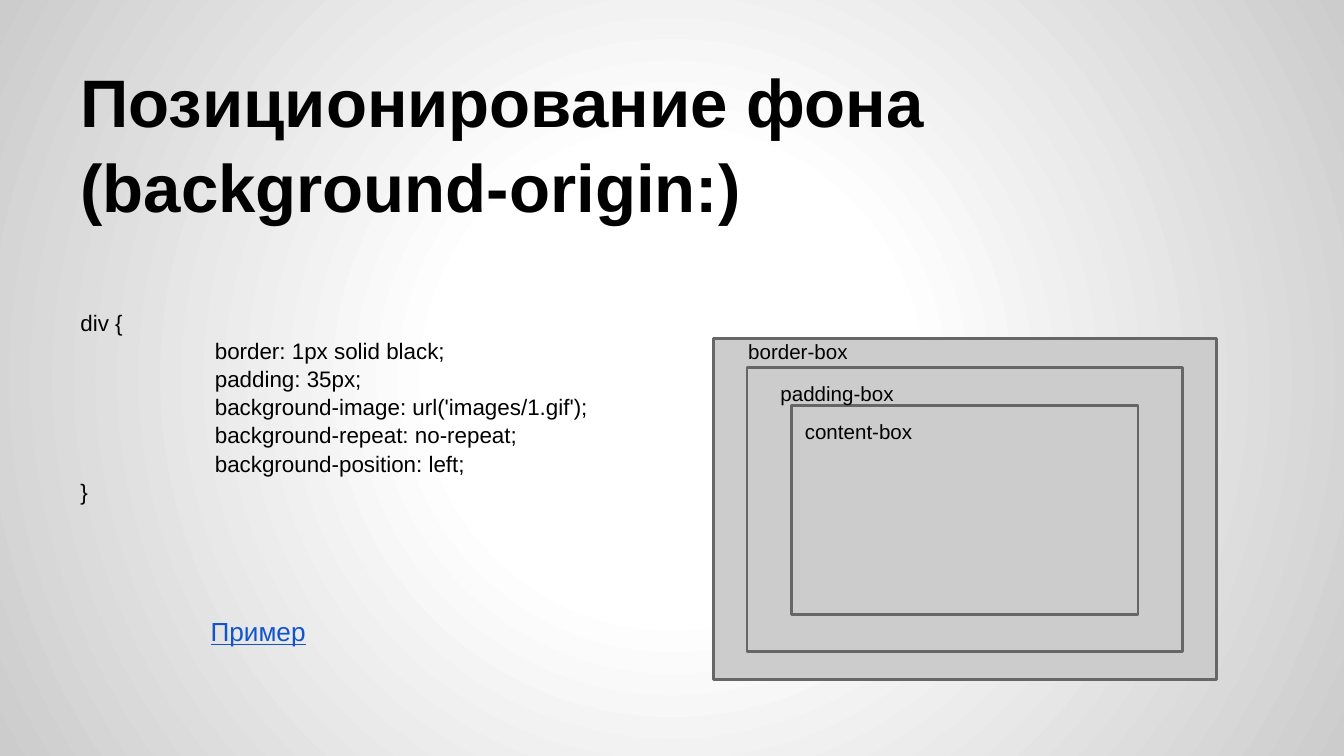
from dataclasses import dataclass

from lxml.etree import SubElement
from pptx import Presentation
from pptx.dml.color import RGBColor
from pptx.enum.shapes import MSO_SHAPE
from pptx.enum.text import MSO_ANCHOR, MSO_AUTO_SIZE, PP_ALIGN
from pptx.oxml import parse_xml
from pptx.oxml.ns import nsdecls, qn
from pptx.slide import Slide
from pptx.text.text import TextFrame
from pptx.util import Cm, Pt

COLORS = {"text": "000000", "link": "1155CC", "box": "CCCCCC",
          "outline": "666666", "center": "FFFFFF", "edge": "CCCCCC"}
FONT = "Arial"
CODE_INDENT = Cm(2.54)


@dataclass(frozen=True)
class Area:
    left: float
    top: float
    width: float
    height: float

    def lengths(self) -> list[Cm]:
        return [Cm(n) for n in (self.left, self.top, self.width, self.height)]


@dataclass(frozen=True)
class Label:
    text: str
    area: Area
    size: float = 11
    color: str = "text"
    underline: bool = False


BOXES = [
    Area(13.49, 6.4, 9.5, 6.45),
    Area(14.12, 6.95, 8.23, 5.36),
    Area(14.96, 7.67, 6.55, 3.94),
]
LABELS = [
    Label("border-box", Area(13.89, 6.15, 3.05, 1.09)),
    Label("padding-box", Area(14.5, 6.96, 3.05, 1.09)),
    Label("content-box", Area(14.96, 7.67, 3.05, 1.09)),
    Label("Пример", Area(3.73, 11.38, 3.81, 1.47), 14, "link", True),
]
TITLE = ["Позиционирование фона", "(background-origin:)"]
DECLARATIONS = [
    "border: 1px solid black;",
    "padding: 35px;",
    "background-image: url('images/1.gif');",
    "background-repeat: no-repeat;",
    "background-position: left;",
]


def rgb(name: str) -> RGBColor:
    return RGBColor.from_string(COLORS[name])


def paint_background(slide: Slide) -> None:
    stops = "".join(
        f'<a:gs pos="{position * 1000}"><a:srgbClr val="{COLORS[name]}"/></a:gs>'
        for position, name in [(0, "center"), (30, "center"), (100, "edge")])
    slide.background.fill.solid()
    solid = slide.background._cSld.find(".//" + qn("a:solidFill"))
    solid.getparent().replace(solid, parse_xml(
        f'<a:gradFill {nsdecls("a")}><a:gsLst>{stops}</a:gsLst>'
        '<a:path path="circle"><a:fillToRect l="50000" t="50000" r="50000" b="50000"/>'
        '</a:path></a:gradFill>'))


def write(frame: TextFrame, lines: list[str], size: float, color: str = "text",
          bold: bool = False, underline: bool = False, spacing: float = 1.0,
          anchor: MSO_ANCHOR = MSO_ANCHOR.TOP) -> None:
    frame.text = "\n".join(lines)
    frame.word_wrap = True
    frame.auto_size = MSO_AUTO_SIZE.NONE
    frame.vertical_anchor = anchor
    frame.margin_left = frame.margin_right = Cm(0.25)
    frame.margin_top = frame.margin_bottom = Cm(0.25)
    for paragraph in frame.paragraphs:
        paragraph.alignment = PP_ALIGN.LEFT
        paragraph.line_spacing = spacing
        paragraph.space_before = Pt(0)
        font = paragraph.font
        font.name, font.size = FONT, Pt(size)
        font.bold, font.underline = bold, underline
        font.color.rgb = rgb(color)


def place(shape, area: Area) -> None:
    shape.left, shape.top, shape.width, shape.height = area.lengths()


def add_title(slide: Slide) -> None:
    title = slide.shapes.title
    place(title, Area(1.27, 0.58, 22.86, 3.94))
    write(title.text_frame, TITLE, 36, bold=True, spacing=1.05,
          anchor=MSO_ANCHOR.BOTTOM)


def add_code(slide: Slide) -> None:
    code = slide.placeholders[1]
    place(code, Area(1.27, 5.56, 12.62, 5.94))
    write(code.text_frame, ["div {", *DECLARATIONS, "}"], 12, spacing=1.05)
    for paragraph in code.text_frame.paragraphs:
        properties = paragraph._p.get_or_add_pPr()
        indent = CODE_INDENT if paragraph.text in DECLARATIONS else 0
        properties.set("marL", str(int(indent)))
        properties.set("indent", "0")
        properties.insert_element_before(
            SubElement(properties, qn("a:buNone")), "a:tabLst", "a:defRPr")


def add_box(slide: Slide, area: Area) -> None:
    box = slide.shapes.add_shape(MSO_SHAPE.RECTANGLE, *area.lengths())
    box.shadow.inherit = False
    box.fill.solid()
    box.fill.fore_color.rgb = rgb("box")
    box.line.color.rgb = rgb("outline")
    box.line.width = Pt(1.5)


def add_label(slide: Slide, label: Label) -> None:
    textbox = slide.shapes.add_textbox(*label.area.lengths())
    write(textbox.text_frame, [label.text], label.size, label.color,
          underline=label.underline)


def main() -> None:
    deck = Presentation()
    deck.slide_width, deck.slide_height = Cm(25.4), Cm(14.29)
    slide = deck.slides.add_slide(deck.slide_layouts[1])
    paint_background(slide)
    add_title(slide)
    add_code(slide)
    for area in BOXES:
        add_box(slide, area)
    for label in LABELS:
        add_label(slide, label)
    deck.save("out.pptx")


if __name__ == "__main__":
    main()
